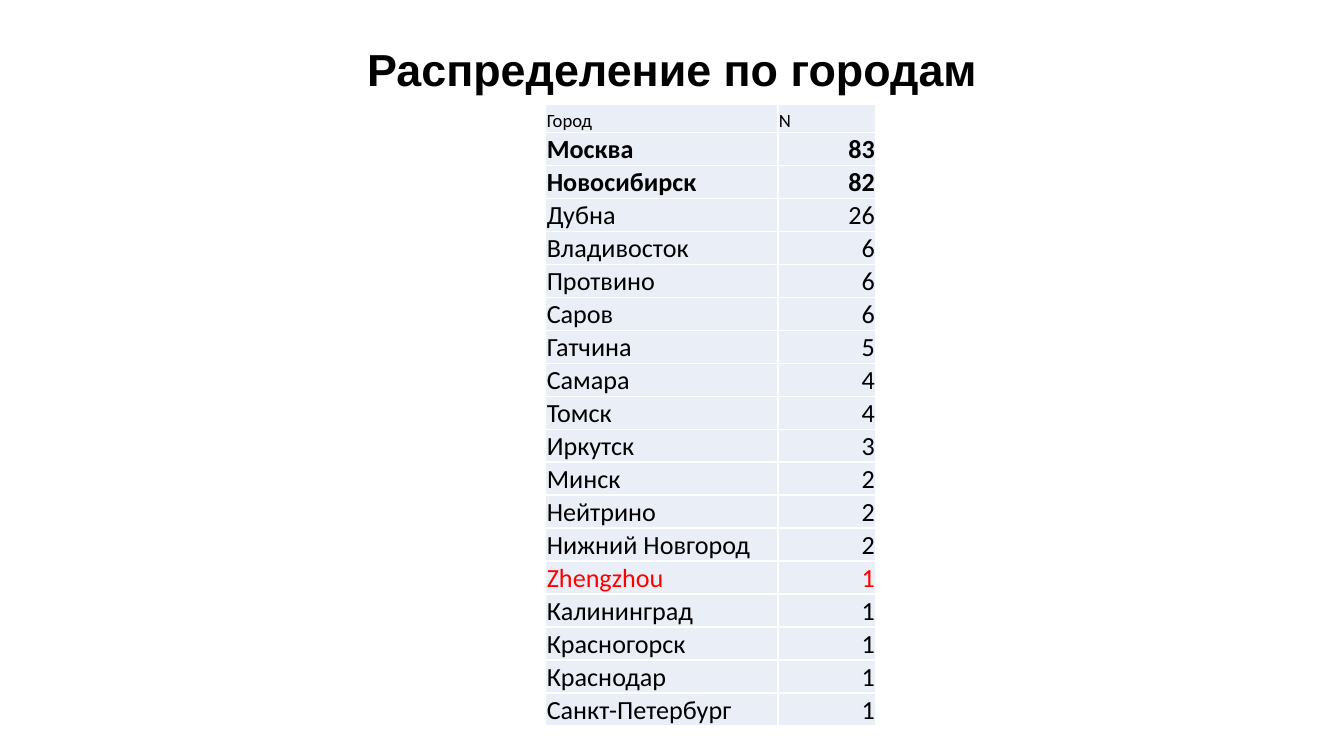
from lxml import etree
from pptx import Presentation
from pptx import util as u
from pptx.dml import color
from pptx.enum import text
from pptx.oxml import ns

CITIES = [
    ("Москва", 83), ("Новосибирск", 82), ("Дубна", 26),
    ("Владивосток", 6), ("Протвино", 6), ("Саров", 6),
    ("Гатчина", 5), ("Самара", 4), ("Томск", 4), ("Иркутск", 3),
    ("Минск", 2), ("Нейтрино", 2), ("Нижний Новгород", 2),
    ("Zhengzhou", 1), ("Калининград", 1), ("Красногорск", 1),
    ("Краснодар", 1), ("Санкт-Петербург", 1),
]
LEFT, CENTER, RIGHT = text.PP_ALIGN.LEFT, text.PP_ALIGN.CENTER, text.PP_ALIGN.RIGHT


def rgb(value):
    return color.RGBColor.from_string(value)


class Deck:
    ink = "000000"
    accent = "FF0000"
    cell_fill = "EAEFF7"
    border = "FFFFFF"
    title_font = "Arial"
    table_font = "Calibri"

    def __init__(self, width, height):
        self.prs = Presentation()
        self.prs.slide_width = u.Pt(width)
        self.prs.slide_height = u.Pt(height)
        self.s = self.prs.slides.add_slide(self.prs.slide_layouts[6])

    def paragraph(self, p, words, font, size, bold, ink, align):
        p.text = words
        p.alignment = align
        p.font.name = font
        p.font.size = u.Pt(size)
        p.font.bold = bold
        p.font.color.rgb = rgb(ink)

    def title(self, words, x, y, w, h):
        tf = self.s.shapes.add_textbox(u.Pt(x), u.Pt(y), u.Pt(w), u.Pt(h)).text_frame
        tf.word_wrap = True
        tf.auto_size = text.MSO_AUTO_SIZE.SHAPE_TO_FIT_TEXT
        tf.vertical_anchor = text.MSO_ANCHOR.MIDDLE
        tf.margin_left = tf.margin_right = u.Pt(24)
        tf.margin_top = tf.margin_bottom = u.Pt(11.5)
        self.paragraph(tf.paragraphs[0], words, self.title_font, 24, True, self.ink, CENTER)

    def borders(self, cell):
        tcPr = cell._tc.get_or_add_tcPr()
        for side in ("a:lnL", "a:lnR", "a:lnT", "a:lnB"):
            ln = etree.SubElement(tcPr, ns.qn(side), w=str(u.Pt(1)))
            fill = etree.SubElement(ln, ns.qn("a:solidFill"))
            etree.SubElement(fill, ns.qn("a:srgbClr"), val=self.border)

    def cell(self, cell, words, size, bold, ink, align):
        self.borders(cell)
        cell.fill.solid()
        cell.fill.fore_color.rgb = rgb(self.cell_fill)
        cell.vertical_anchor = text.MSO_ANCHOR.BOTTOM
        cell.margin_left = cell.margin_right = cell.margin_top = u.Pt(0.6)
        cell.margin_bottom = 0
        self.paragraph(cell.text_frame.paragraphs[0], words, self.table_font,
                       size, bold, ink, align)

    def table(self, header, rows, x, y, widths, row_height, bold_rows, accent_city):
        count = len(rows) + 1
        table = self.s.shapes.add_table(
            count, len(widths), u.Pt(x), u.Pt(y),
            u.Pt(sum(widths)), u.Pt(row_height * count)).table
        table.first_row = table.horz_banding = False
        for column, width in zip(table.columns, widths):
            column.width = u.Pt(width)
        for row in table.rows:
            row.height = u.Pt(row_height)
        for c, words in enumerate(header):
            self.cell(table.cell(0, c), words, 10, False, self.ink, LEFT)
        for i, (city, number) in enumerate(rows, 1):
            ink = self.accent if city == accent_city else self.ink
            bold = i <= bold_rows
            self.cell(table.cell(i, 0), city, 14, bold, ink, LEFT)
            self.cell(table.cell(i, 1), str(number), 14, bold, ink, RIGHT)


def main():
    deck = Deck(720, 405)
    deck.table(("Город", "N"), CITIES, 292.3, 55.6, (124.4, 52.6), 15.5,
               bold_rows=2, accent_city="Zhengzhou")
    deck.title("Распределение по городам", 49.7, 10.3, 620.6, 53)
    deck.prs.save("out.pptx")


if __name__ == "__main__":
    main()
